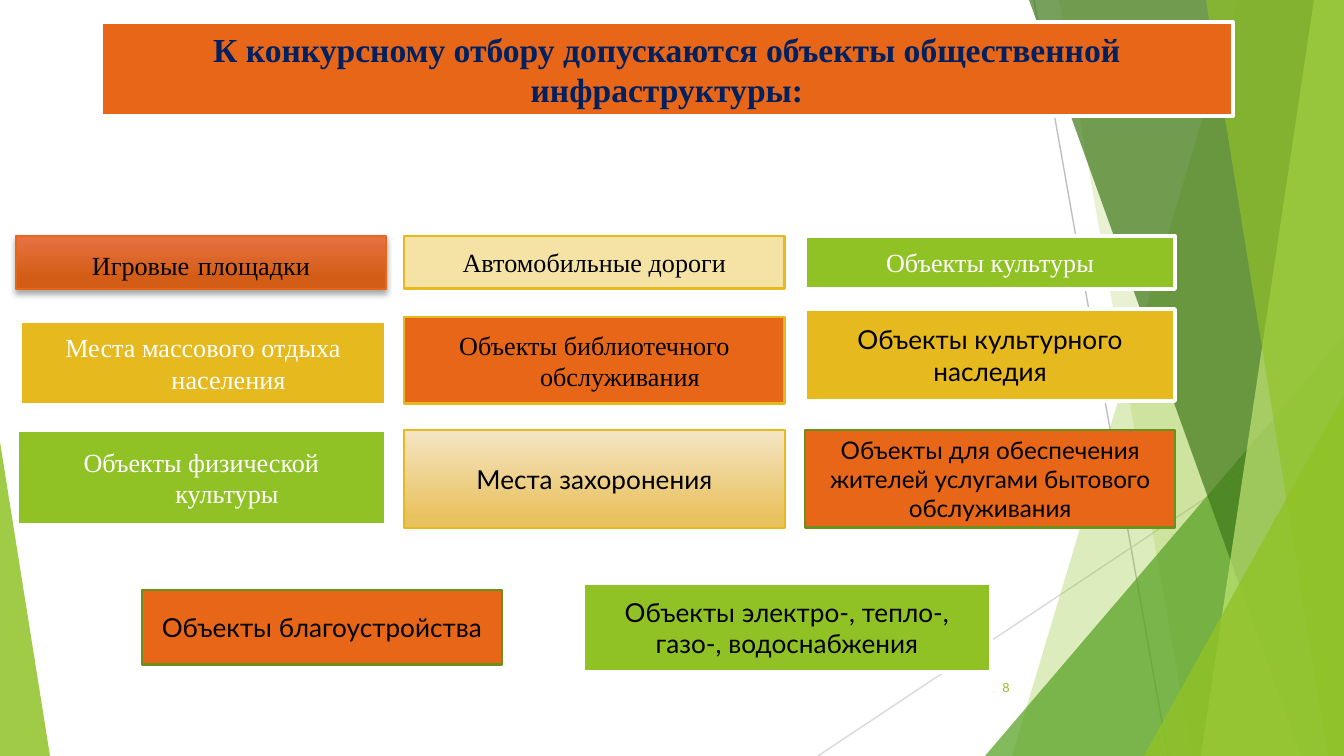
import lxml.etree
import pptx
import pptx.dml.color
import pptx.enum.shapes
import pptx.enum.text
import pptx.oxml.ns
import pptx.util

PX = 914400 / 134.4  # EMU in one px
WIDTH, HEIGHT = 1344, 756
SERIF, SANS = "Times New Roman", "Lato"
GREEN, ORANGE, GOLD, WHITE, BLACK = "90C226", "E76618", "E6B91E", "FFFFFF", "000000"
OLIVE = "6B901C"
SHAPES = pptx.enum.shapes.MSO_SHAPE
ALIGN = pptx.enum.text.PP_ALIGN
MIDDLE = pptx.enum.text.MSO_ANCHOR.MIDDLE
qn = pptx.oxml.ns.qn


def px(*lengths):
    """Turn px into EMU."""
    return [pptx.util.Emu(round(length * PX)) for length in lengths]


def rgb(color):
    return pptx.dml.color.RGBColor.from_string(color)


deck = pptx.Presentation()
deck.slide_width, deck.slide_height = px(WIDTH, HEIGHT)
slide = deck.slides.add_slide(deck.slide_layouts[6])
shapes = slide.shapes

# Thin lines behind the facets
for ends, color in [((1034, 0, 1168, HEIGHT), "BFBFBF"), ((WIDTH, 406, 818, HEIGHT), "D9D9D9")]:
    line = shapes.add_connector(pptx.enum.shapes.MSO_CONNECTOR.STRAIGHT, *px(*ends))
    line.line.color.rgb = rgb(color)
    line.line.width = pptx.util.Pt(0.75)
    lxml.etree.SubElement(line._element.spPr, qn("a:effectLst"))

# Translucent facets: a band is (top x, bottom x) and reaches the right edge,
# a triangle is (left, top, width, height, apex)
facets = [
    ((1238, 1012), GREEN, 30),
    ((1059, 1192), GREEN, 20),
    ((985, 336, 359, 420, 1), "54A021", 72),
    ((1029, 1301), "3F7819", 70),
    ((1314, 1201), "C0E474", 70),
    ((1206, 1328), GREEN, 65),
    ((1144, 395, 200, 361, 1), GREEN, 80),
    ((0, 442, 50, 314, 0), GREEN, 85),
]
for geometry, color, opacity in facets:
    if len(geometry) == 2:
        top_x, bottom_x = geometry
        builder = shapes.build_freeform(top_x, 0, scale=PX)
        builder.add_line_segments([(WIDTH, 0), (WIDTH, HEIGHT), (bottom_x, HEIGHT)])
        facet = builder.convert_to_shape()
    else:
        facet = shapes.add_shape(SHAPES.ISOSCELES_TRIANGLE, *px(*geometry[:4]))
        facet.adjustments[0] = geometry[4]
    facet.shadow.inherit = False
    facet.fill.solid()
    facet.fill.fore_color.rgb = rgb(color)
    tint = facet._element.spPr.find(qn("a:solidFill")).find(qn("a:srgbClr"))
    lxml.etree.SubElement(tint, qn("a:alpha"), val=str(opacity * 1000))
    facet.line.fill.background()

# Boxes: place, fill (or gradient stops), line, line width, font, size, text colour, hanging, runs
title = "К конкурсному отбору допускаются объекты общественной инфраструктуры:"
boxes = [
    ((101, 22, 1132, 94), ORANGE, WHITE, 2, SERIF, 18, "002060", False, [title]),
    ((16, 236, 370, 53), [(0, "E87242"), (0.78, "D35D16")], ORANGE, 1, SERIF, 14, BLACK, True,
     ["Игровые", " ", "площадки"]),
    ((404, 236, 381, 53), "F5E3A5", GOLD, 1.5, SERIF, 14, BLACK, True, ["Автомобильные дороги"]),
    ((805, 236, 370, 53), GREEN, WHITE, 2, SERIF, 14, WHITE, True, ["Объекты культуры"]),
    ((20, 321, 366, 84), GOLD, WHITE, 2, SERIF, 14, WHITE, True,
     ["Места массового отдыха населения"]),
    ((404, 317, 381, 87), ORANGE, GOLD, 1.5, SERIF, 14, BLACK, True,
     ["Объекты библиотечного обслуживания"]),
    ((805, 309, 370, 92), GOLD, WHITE, 2, SANS, 14, BLACK, False,
     ["Объекты культурного наследия"]),
    ((17, 430, 369, 95), GREEN, WHITE, 2, SERIF, 14, WHITE, True,
     ["Объекты физической культуры"]),
    ((404, 430, 381, 98), [(0, "F5E5C5"), (0.88, "E9C260")], GOLD, 1, SANS, 14, BLACK, False,
     ["Места захоронения"]),
    ((805, 430, 370, 98), ORANGE, OLIVE, 1.5, SANS, 13, BLACK, False,
     ["Объекты для обеспечения жителей услугами бытового обслуживания"]),
    ((583, 583, 408, 89), GREEN, WHITE, 2, SANS, 14, BLACK, False,
     ["Объекты электро-, тепло-, газо-, водоснабжения"]),
    ((142, 590, 360, 75), ORANGE, OLIVE, 1.5, SANS, 14, BLACK, False,
     ["Объекты благоустройства"]),
]
for place, fill, outline, weight, font, size, ink, hanging, runs in boxes:
    box = shapes.add_shape(SHAPES.RECTANGLE, *px(*place))
    box.shadow.inherit = False
    if isinstance(fill, str):
        box.fill.solid()
        box.fill.fore_color.rgb = rgb(fill)
    else:
        box.fill.gradient()
        box.fill.gradient_angle = 270
        for stop, (position, color) in zip(box.fill.gradient_stops, fill):
            stop.position = position
            stop.color.rgb = rgb(color)
    box.line.color.rgb = rgb(outline)
    box.line.width = pptx.util.Pt(weight)

    if runs[0] == "Игровые":
        effects = box._element.spPr.find(qn("a:effectLst"))
        shadow = lxml.etree.SubElement(
            effects, qn("a:outerShdw"), blurRad=str(pptx.util.Pt(3)),
            dist=str(pptx.util.Pt(2)), dir="5400000", rotWithShape="0")
        shade = lxml.etree.SubElement(shadow, qn("a:srgbClr"), val=BLACK)
        lxml.etree.SubElement(shade, qn("a:alpha"), val="35000")

    box.text_frame.word_wrap = True
    box.text_frame.vertical_anchor = MIDDLE
    para = box.text_frame.paragraphs[0]
    para.alignment = ALIGN.CENTER
    if hanging:
        para.space_before = pptx.util.Pt(2.8)
        margin, = px(51)
        properties = para._p.get_or_add_pPr()
        properties.set("marL", str(margin))
        properties.set("indent", str(-margin))
    for text in runs:
        span = para.add_run()
        span.text = text
        span.font.name = font
        span.font.size = pptx.util.Pt(18 if text == " " else size)
        span.font.bold = text == title
        span.font.color.rgb = rgb(ink)

page_number = shapes.add_textbox(*px(948, 667, 75, 40))
page_number.text_frame.word_wrap = True
page_number.text_frame.vertical_anchor = MIDDLE
para = page_number.text_frame.paragraphs[0]
para.alignment = ALIGN.RIGHT
span = para.add_run()
span.text = "8"
span.font.name = SANS
span.font.size = pptx.util.Pt(6.8)
span.font.color.rgb = rgb(GREEN)

deck.save("out.pptx")
